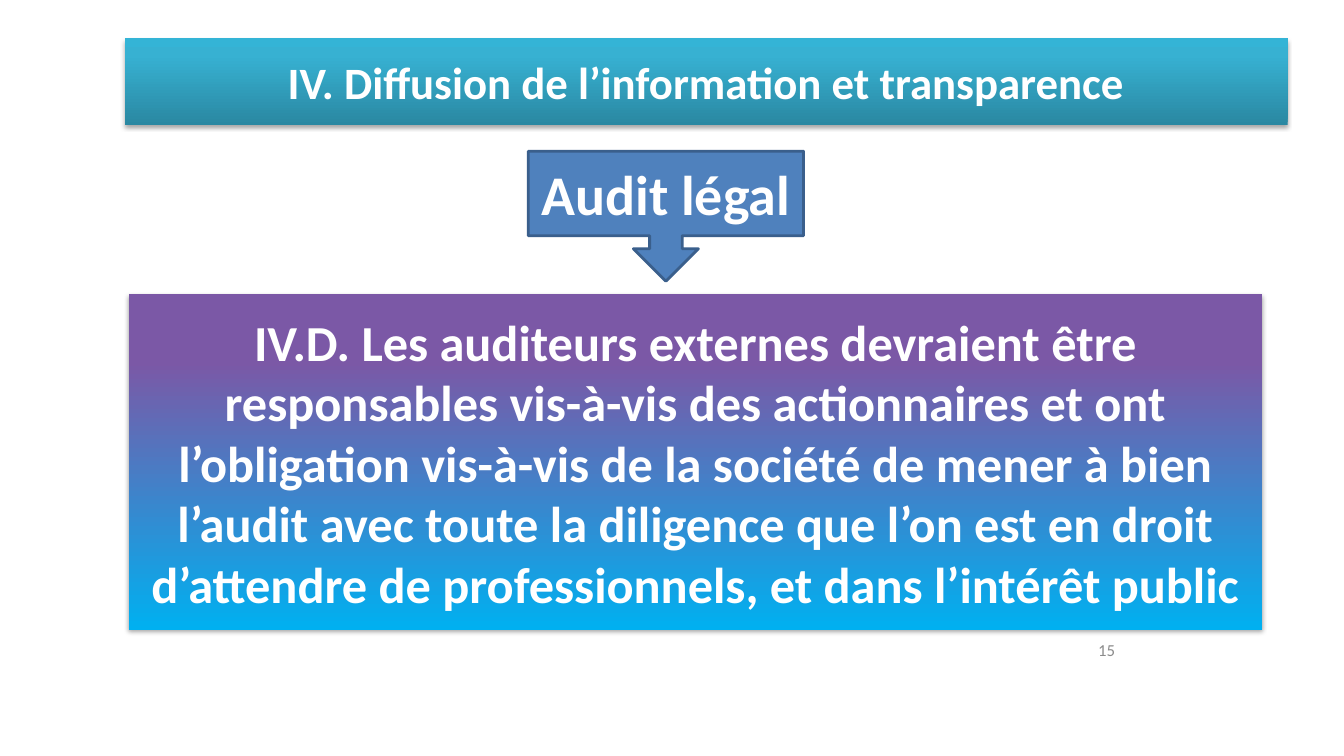
from lxml import etree
from pptx import Presentation
from pptx.dml.color import RGBColor
from pptx.enum.shapes import MSO_SHAPE
from pptx.enum.text import MSO_ANCHOR, MSO_AUTO_SIZE, PP_ALIGN
from pptx.oxml.ns import qn
from pptx.util import Inches, Pt

RECT = MSO_SHAPE.RECTANGLE
CALLOUT = MSO_SHAPE.DOWN_ARROW_CALLOUT
MIDDLE = MSO_ANCHOR.MIDDLE
FIXED = MSO_AUTO_SIZE.NONE
CENTER = PP_ALIGN.CENTER
RIGHT = PP_ALIGN.RIGHT

HEX = {
    "white": "FFFFFF", "black": "000000", "gray": "8C8C8C",
    "blue": "4F81BD", "edge": "3A5F8C",
    "teal": [(0, "2A88A2"), (80, "37B1D2"), (100, "34B4D6")],
    "dusk": [(0, "00B0F0"), (80, "7B58A6"), (100, "7C57A8")],
}


def color(name):
    return RGBColor.from_string(HEX[name])


class Deck:
    font = "Calibri"

    def __init__(self):
        self.prs = Presentation()
        self.prs.slide_width = Inches(13.33)
        self.prs.slide_height = Inches(7.5)
        self.slide = self.prs.slides.add_slide(self.prs.slide_layouts[5])

    def words(self, shape, text, size, tint="white", bold=True, align=CENTER):
        frame = shape.text_frame
        look = {"word_wrap": True, "auto_size": FIXED, "vertical_anchor": MIDDLE}
        for key, value in look.items():
            setattr(frame, key, value)
        line = frame.paragraphs[0]
        line.alignment = align
        run = line.add_run()
        run.text = text
        look = {"name": self.font, "size": Pt(size), "bold": bold}
        for key, value in look.items():
            setattr(run.font, key, value)
        run.font.color.rgb = color(tint)

    def blend(self, shape, name):
        shape.line.fill.background()
        shape.fill.gradient()
        shape.fill.gradient_angle = 90
        stops = next(shape._element.iter(qn("a:gsLst")))
        for old in list(stops):
            stops.remove(old)
        for place, tone in HEX[name]:
            stop = etree.SubElement(stops, qn("a:gs"), pos=str(place * 1000))
            etree.SubElement(stop, qn("a:srgbClr"), val=tone)

    def shade(self, shape):
        shape.shadow.inherit = False
        effect = next(shape._element.iter(qn("a:effectLst")))
        cast = etree.SubElement(
            effect, qn("a:outerShdw"), blurRad=str(Pt(3.1)), dist=str(Pt(1.8)),
            dir="5400000", rotWithShape="0")
        tone = etree.SubElement(cast, qn("a:srgbClr"), val=HEX["black"])
        etree.SubElement(tone, qn("a:alpha"), val="35000")

    def banner(self, shape, text, size, blend):
        self.blend(shape, blend)
        self.shade(shape)
        self.words(shape, text, size)

    def title(self, text, box, size, blend):
        shape = self.slide.shapes.title
        for key, value in zip(("left", "top", "width", "height"), box):
            setattr(shape, key, Inches(value))
        self.banner(shape, text, size, blend)

    def panel(self, text, box, size, blend):
        shape = self.slide.shapes.add_shape(RECT, *map(Inches, box))
        self.banner(shape, text, size, blend)

    def callout(self, text, box, size, fill, edge):
        shape = self.slide.shapes.add_shape(CALLOUT, *map(Inches, box))
        shape.shadow.inherit = False
        shape.fill.solid()
        shape.fill.fore_color.rgb = color(fill)
        shape.line.color.rgb = color(edge)
        shape.line.width = Pt(2)
        self.words(shape, text, size)

    def label(self, text, box, size, tint):
        shape = self.slide.shapes.add_textbox(*map(Inches, box))
        self.words(shape, text, size, tint, False, RIGHT)


def main():
    deck = Deck()
    deck.title("IV. Diffusion de l’information et transparence",
               (1.24, 0.38, 11.53, 0.86), 32, "teal")
    deck.label("15", (8.83, 6.25, 2.33, 0.4), 12, "gray")
    deck.panel("IV.D. Les auditeurs externes devraient être responsables "
               "vis-à-vis des actionnaires et ont l’obligation vis-à-vis de "
               "la société de mener à bien l’audit avec toute la diligence "
               "que l’on est en droit d’attendre de professionnels, et dans "
               "l’intérêt public",
               (1.28, 2.92, 11.24, 3.33), 36, "dusk")
    deck.callout("Audit légal", (5.24, 1.5, 2.73, 1.29), 40, "blue", "edge")
    deck.prs.save("out.pptx")


if __name__ == "__main__":
    main()
